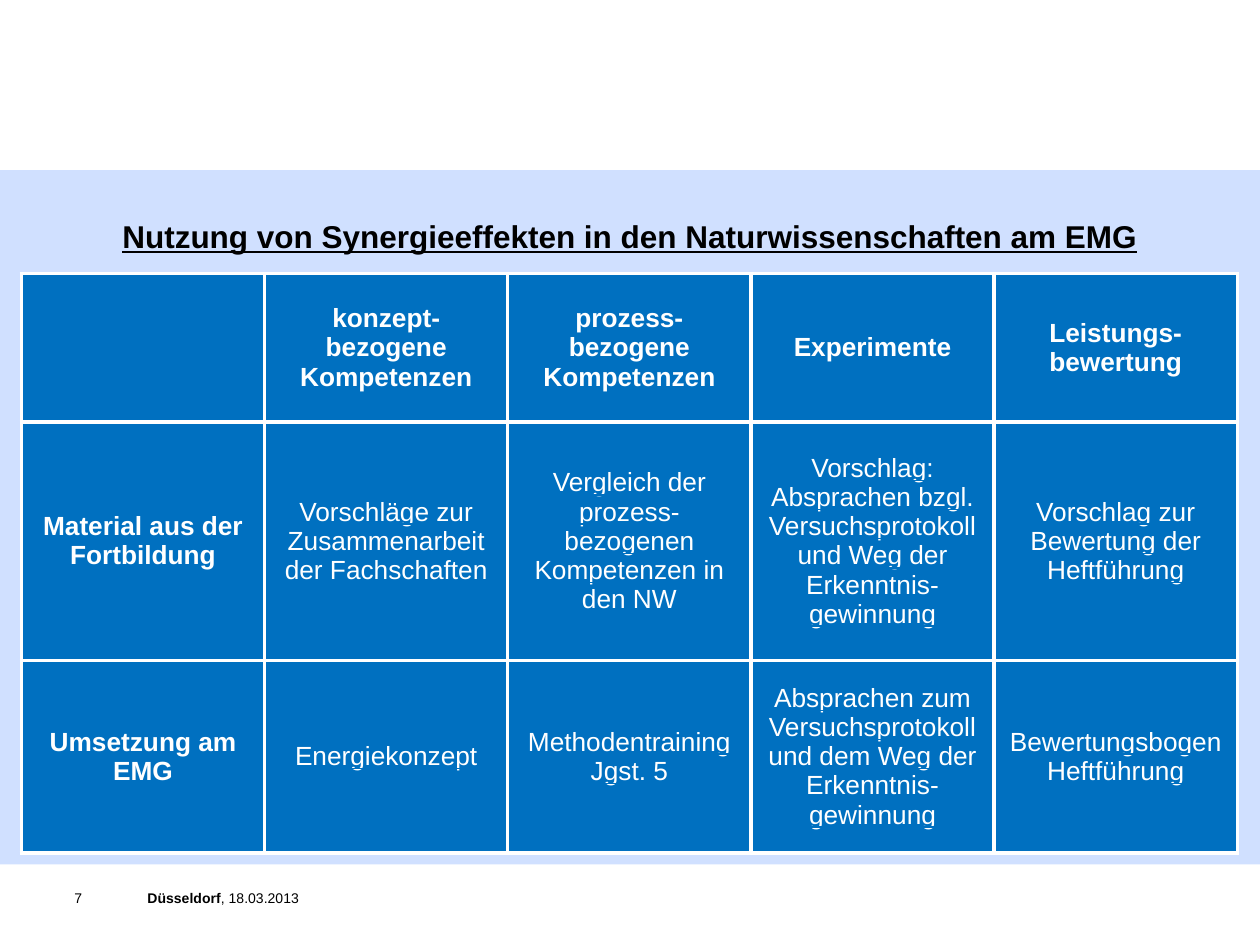
"""Build the slide on synergy effects in science teaching."""
from lxml import etree
from pptx import Presentation
from pptx.dml.color import RGBColor
from pptx.enum.text import MSO_ANCHOR, MSO_AUTO_SIZE, PP_ALIGN
from pptx.oxml import parse_xml
from pptx.oxml.ns import nsdecls, qn
from pptx.util import Inches, Pt

CENTER = PP_ALIGN.CENTER
TOP, MIDDLE = MSO_ANCHOR.TOP, MSO_ANCHOR.MIDDLE
FIXED = MSO_AUTO_SIZE.NONE
COLORS = {"band": "6699FF", "cell": "0070C0", "white": "FFFFFF", "black": "000000"}
ROWS = [
    ["", "konzept-bezogene Kompetenzen", "prozess-bezogene Kompetenzen",
     "Experimente", "Leistungs-bewertung"],
    ["Material aus der Fortbildung",
     "Vorschläge zur Zusammenarbeit der Fachschaften",
     "Vergleich der prozess-bezogenen Kompetenzen in den NW",
     "Vorschlag: Absprachen bzgl. Versuchsprotokoll und Weg der Erkenntnis-gewinnung",
     "Vorschlag zur Bewertung der Heftführung"],
    ["Umsetzung am EMG", "Energiekonzept", "Methodentraining Jgst. 5",
     "Absprachen zum Versuchsprotokoll und dem Weg der Erkenntnis-gewinnung",
     "Bewertungsbogen Heftführung"],
]
HEIGHTS = [1.18, 1.89, 1.53]
FOOTER = [
    (0.59, 0.32, [("7", False)]),
    (1.17, 2.09, [("Düsseldorf", True), (", 18.03.2013", False)]),
]


def style(font, size, color, bold=False):
    font.name = "Arial"
    font.size = Pt(size)
    font.bold = bold
    font.color.rgb = RGBColor.from_string(COLORS[color])


prs = Presentation()
prs.slide_width, prs.slide_height = Inches(10), Inches(7.5)
slide = prs.slides.add_slide(prs.slide_layouts[5])

title = slide.shapes.title
title.left, title.top = Inches(0), Inches(1.35)
title.width, title.height = Inches(10), Inches(5.51)
title.fill.solid()
title.fill.fore_color.rgb = RGBColor.from_string(COLORS["band"])
tint = title.element.spPr.find(qn("a:solidFill"))[0]
etree.SubElement(tint, qn("a:alpha"), val="30000")
frame = title.text_frame
frame.text = "Nutzung von Synergieeffekten in den Naturwissenschaften am EMG"
frame.auto_size = FIXED
frame.vertical_anchor = TOP
frame.margin_top = Inches(0.37)
para = frame.paragraphs[0]
para.alignment = CENTER
style(para.font, 18, "black", True)
para.font.underline = True

for left, width, runs in FOOTER:
    box = slide.shapes.add_textbox(Inches(left), Inches(7.06), Inches(width), Inches(0.37))
    frame = box.text_frame
    frame.word_wrap = True
    frame.margin_left = frame.margin_right = frame.margin_top = frame.margin_bottom = 0
    for text, bold in runs:
        run = frame.paragraphs[0].add_run()
        run.text = text
        style(run.font, 8, "black", bold)

table = slide.shapes.add_table(
    len(ROWS), len(ROWS[0]), Inches(0.17), Inches(2.17), Inches(9.65), Inches(sum(HEIGHTS))
).table
for col in table.columns:
    col.width = Inches(1.93)
for r, (texts, height) in enumerate(zip(ROWS, HEIGHTS)):
    table.rows[r].height = Inches(height)
    for c, text in enumerate(texts):
        cell = table.cell(r, c)
        cell.vertical_anchor = MIDDLE
        props = cell._tc.get_or_add_tcPr()
        for side in "LRTB":
            props.append(parse_xml(
                f'<a:ln{side} {nsdecls("a")} w="{Pt(2.25)}"><a:solidFill>'
                f'<a:srgbClr val="{COLORS["white"]}"/></a:solidFill></a:ln{side}>'))
        cell.fill.solid()
        cell.fill.fore_color.rgb = RGBColor.from_string(COLORS["cell"])
        cell.text = text
        para = cell.text_frame.paragraphs[0]
        para.alignment = CENTER
        head = r == 0 or c == 0
        style(para.font, 15, "white", head)
        if not head:
            para.font.underline = True
            ink = para._p.pPr.find(qn("a:defRPr")).find(qn("a:solidFill"))
            ink.addnext(parse_xml(
                f'<a:uFill {nsdecls("a")}><a:solidFill>'
                f'<a:srgbClr val="{COLORS["cell"]}"/></a:solidFill></a:uFill>'))

prs.save("out.pptx")
